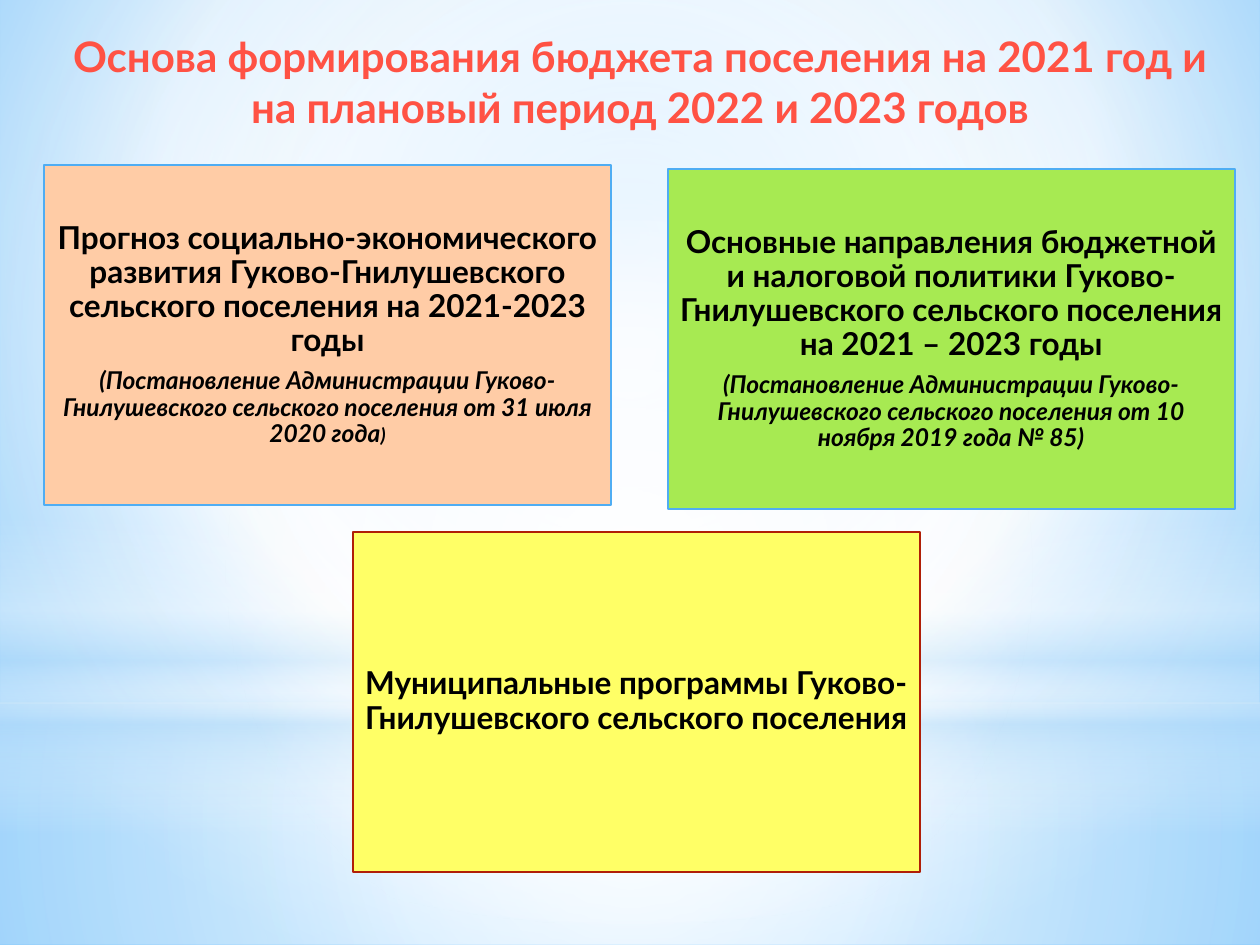
from lxml.etree import SubElement
from pptx import Presentation
from pptx.dml.color import RGBColor
from pptx.enum.shapes import MSO_SHAPE
from pptx.enum.text import MSO_ANCHOR, PP_ALIGN
from pptx.oxml import parse_xml
from pptx.oxml.ns import nsdecls, qn
from pptx.util import Inches, Pt

RED = RGBColor(0xFF, 0x52, 0x44)
BLACK = RGBColor(0, 0, 0)
WHITE = RGBColor(0xFF, 0xFF, 0xFF)
PEACH = RGBColor(0xFF, 0xCC, 0xA6)
GREEN = RGBColor(0xA7, 0xEA, 0x52)
YELLOW = RGBColor(0xFF, 0xFF, 0x66)
BLUE = RGBColor(0x4F, 0xAD, 0xF3)
RUST = RGBColor(0xB0, 0x1F, 0x07)
PALE = RGBColor(0xB4, 0xDC, 0xFA)
SKY = RGBColor(0x9E, 0xD5, 0xFF)
DEEP = RGBColor(0x5B, 0xB9, 0xFF)
MID = (50, 50, 50, 50)


class Deck:
    """Holds the style and the current slide, and draws each kind of element."""

    font = "Lato"
    pad = Inches(0.07)
    size = Inches(4.5), Inches(2.7)

    def __init__(self, slide):
        self.slide = slide

    def blend(self, root, stops, focus=None):
        grad = parse_xml(f'<a:gradFill {nsdecls("a")} rotWithShape="1"><a:gsLst/></a:gradFill>')
        for pos, color, alpha in stops:
            stop = SubElement(grad[0], qn("a:gs"), pos=str(pos * 1000))
            tint = SubElement(stop, qn("a:srgbClr"), val=str(color))
            if alpha < 100:
                SubElement(tint, qn("a:alpha"), val=str(alpha * 1000))
        if focus:
            way = SubElement(grad, qn("a:path"), path="circle")
            sides = {k: str(v * 1000) for k, v in zip("ltrb", focus)}
            SubElement(way, qn("a:fillToRect"), sides)
        else:
            SubElement(grad, qn("a:lin"), ang="5400000", scaled="0")
        old = root.xpath(".//a:solidFill")[0]
        old.getparent().replace(old, grad)

    def backdrop(self, stops, focus):
        self.slide.background.fill.solid()
        self.blend(self.slide.element, stops, focus)

    def shape(self, kind, left, top, width, height, color):
        item = self.slide.shapes.add_shape(kind, left, top, width, height)
        item.shadow.inherit = False
        item.fill.solid()
        item.fill.fore_color.rgb = color
        return item

    def glow(self, kind, top, height, stops, focus=None):
        item = self.shape(kind, 0, Inches(top), Inches(10), Inches(height), WHITE)
        item.line.fill.background()
        self.blend(item.element, stops, focus)

    def words(self, para, text, size, color, slant=False):
        run = para.add_run()
        run.text = text
        font = run.font
        font.name, font.size, font.bold, font.italic = self.font, Pt(size), True, slant
        font.color.rgb = color

    def title(self, text):
        box = self.slide.shapes.add_textbox(Inches(0.33), Inches(0.21), Inches(9.5), Inches(0.87))
        frame = box.text_frame
        frame.word_wrap = True
        frame.vertical_anchor = MSO_ANCHOR.MIDDLE
        para = frame.paragraphs[0]
        para.alignment = PP_ALIGN.CENTER
        self.words(para, text, 24, RED)

    def card(self, left, top, fill, edge, paras):
        item = self.shape(MSO_SHAPE.RECTANGLE, Inches(left), Inches(top), *self.size, fill)
        item.line.color.rgb = edge
        item.line.width = Pt(1.25)
        frame = item.text_frame
        frame.word_wrap = True
        frame.vertical_anchor = MSO_ANCHOR.MIDDLE
        frame.margin_left = frame.margin_right = self.pad
        frame.margin_top = frame.margin_bottom = self.pad
        for i, runs in enumerate(paras):
            para = frame.add_paragraph() if i else frame.paragraphs[0]
            para.alignment = PP_ALIGN.CENTER
            para.line_spacing = 0.9
            para.space_after = Pt(6)
            for text, size in runs:
                self.words(para, text, size, BLACK, size < 18)


def main():
    prs = Presentation()
    prs.slide_width, prs.slide_height = Inches(10), Inches(7.5)
    deck = Deck(prs.slides.add_slide(prs.slide_layouts[6]))
    rect = MSO_SHAPE.RECTANGLE

    deck.backdrop([(0, SKY, 100), (60, WHITE, 100), (100, DEEP, 100)], (20, 10, 20, 60))
    deck.glow(rect, 5.58, 1.92, [(0, WHITE, 91), (37, WHITE, 76), (100, PALE, 79)], MID)
    deck.glow(rect, 0, 5.58, [(0, WHITE, 89), (48, WHITE, 62), (100, PALE, 79)], MID)
    deck.glow(rect, 4.12, 2.5, [(0, WHITE, 0), (29, WHITE, 30), (45, PALE, 40),
                                (55, WHITE, 26), (65, PALE, 60), (100, WHITE, 0)])
    deck.glow(MSO_SHAPE.OVAL, 1.75, 5.58, [(0, WHITE, 100), (56, WHITE, 0)], MID)

    deck.title("Основа формирования бюджета поселения на 2021 год и на плановый период 2022 и 2023 годов")
    deck.card(0.35, 1.31, PEACH, BLUE, [
        [("Прогноз социально-экономического развития Гуково-Гнилушевского "
          "сельского поселения на 2021-2023 годы", 18)],
        [("(Постановление Администрации Гуково-Гнилушевского сельского "
          "поселения от 31 июля 2020 года", 14), (")", 11)]])
    deck.card(5.3, 1.34, GREEN, BLUE, [
        [("Основные направления бюджетной и налоговой политики "
          "Гуково-Гнилушевского сельского поселения на 2021 – 2023 годы", 18)],
        [("(Постановление Администрации Гуково-Гнилушевского сельского "
          "поселения от 10 ноября 2019 года № 85)", 14)]])
    deck.card(2.8, 4.22, YELLOW, RUST, [
        [("Муниципальные программы Гуково-Гнилушевского сельского поселения", 18)]])
    prs.save("out.pptx")


if __name__ == "__main__":
    main()
